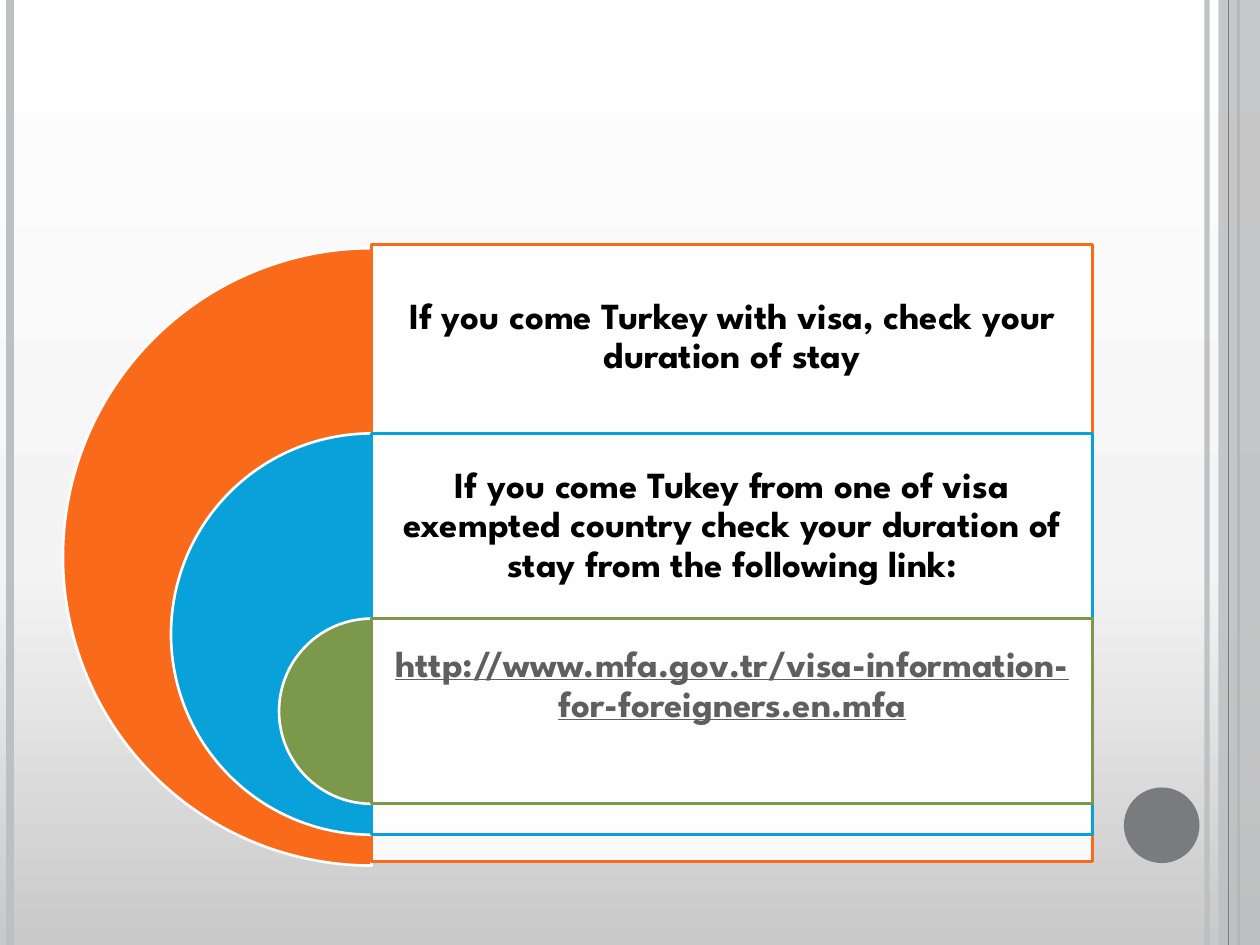
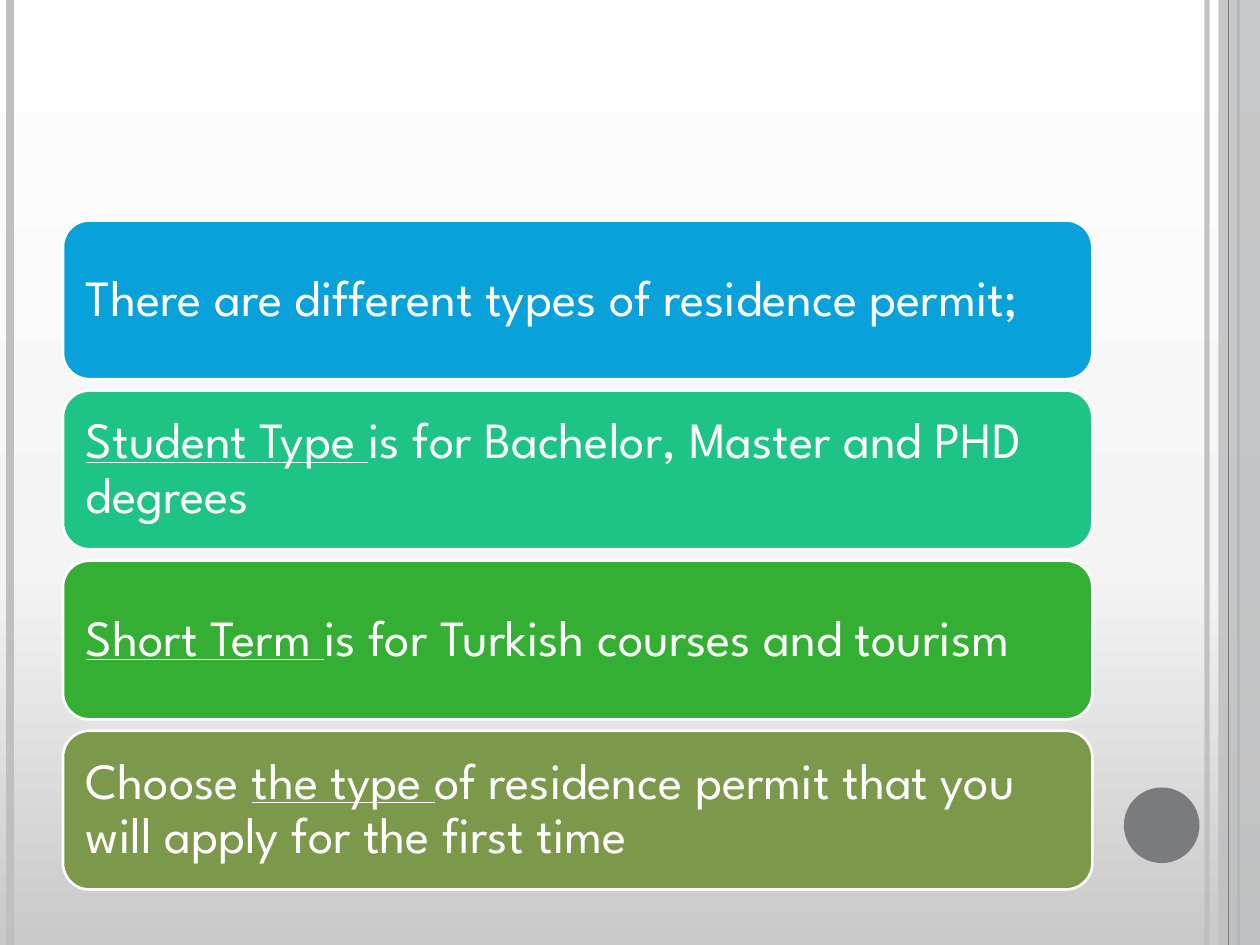
import copy

import pptx
import pptx.util
import pptx.dml.color
import pptx.enum.shapes
import pptx.enum.text
import pptx.oxml.ns
import pptx.oxml.xmlchemy
import lxml.etree

Inches = pptx.util.Inches
RGBColor = pptx.dml.color.RGBColor
SHAPE = pptx.enum.shapes.MSO_SHAPE
ALIGN = pptx.enum.text.PP_ALIGN
qn = pptx.oxml.ns.qn

WIDTH, HEIGHT = 10, 7.5
FONT = "League Spartan"

WHITE = RGBColor(0xFF, 0xFF, 0xFF)
BLACK = RGBColor(0x00, 0x00, 0x00)
LINK_GREY = RGBColor(0x5F, 0x5F, 0x5F)
PALE_GREY = RGBColor(0xBE, 0xBF, 0xC0)
DARK_GREY = RGBColor(0x79, 0x7B, 0x7E)
ORANGE = RGBColor(0xF9, 0x6A, 0x1B)
BLUE = RGBColor(0x08, 0xA1, 0xD9)
TEAL = RGBColor(0x1E, 0xC3, 0x86)
GREEN = RGBColor(0x35, 0xAE, 0x34)
OLIVE = RGBColor(0x7C, 0x98, 0x4A)

BACKDROP = [(0, "C9C9C9"), (40, "F4F4F4"), (100, "FFFFFF")]
BACK_RULES = [(9.58, PALE_GREY, 3, 93), (0.08, PALE_GREY, 4.5, 100), (9.83, DARK_GREY, 1.5, 100)]
FRONT_RULES = [(9.75, DARK_GREY, 0.75, 100)]
SIDE_BAND = (9.67, 0, 0.33, HEIGHT)
PAGE_DOT = (8.92, 6.25, 0.6, 0.6)

STAY_CHECKS = [
    {"runs": [("If you come Turkey with visa, check your duration of stay", False)],
     "accent": ORANGE, "ink": BLACK, "rise": 0.03, "lift": 0},
    {"runs": [("If you come Tukey from one of visa exempted country check your duration of stay "
               "from the following link:", False)],
     "accent": BLUE, "ink": BLACK, "rise": 0, "lift": 0},
    {"runs": [("http://www.mfa.gov.tr/visa-information-for-foreigners.en.mfa", True)],
     "accent": OLIVE, "ink": LINK_GREY, "rise": 0, "lift": 0.41},
]

PERMIT_TYPES = [
    (BLUE, [("There are different types of residence permit;", False)]),
    (TEAL, [("Student Type ", True), ("is for Bachelor, Master and PHD degrees", False)]),
    (GREEN, [("Short Term ", True), ("is for Turkish courses and tourism", False)]),
    (OLIVE, [("Choose ", False), ("the type ", True),
             ("of residence permit that you will apply for the first time", False)]),
]

LEFT, CONTENT_WIDTH = 0.5, 8.17
RING_TOP, RING_SIZE, RING_STEP = 1.97, 4.9, 0.3
BAR_TOP, BAR_HEIGHT, BAR_GAP = 1.75, 1.26, 0.09


def set_opacity(item, percent):
    if percent < 100:
        color = item.element.find(".//" + qn("a:srgbClr"))
        lxml.etree.SubElement(color, qn("a:alpha")).set("val", str(percent * 1000))


def add_block(slide, kind, box, fill, outline=None, opacity=100):
    block = slide.shapes.add_shape(kind, *map(Inches, box))
    block.shadow.inherit = False
    block.fill.solid()
    block.fill.fore_color.rgb = fill
    set_opacity(block, opacity)
    if outline is None:
        block.line.fill.background()
    else:
        block.line.color.rgb = outline
        block.line.width = pptx.util.Pt(1.5)
    return block


def add_rule(slide, x, color, weight, opacity):
    rule = slide.shapes.add_connector(pptx.enum.shapes.MSO_CONNECTOR.STRAIGHT,
                                      Inches(x), 0, Inches(x), Inches(HEIGHT))
    rule.line.color.rgb = color
    rule.line.width = pptx.util.Pt(weight)
    set_opacity(rule, opacity)
    lxml.etree.SubElement(rule.element.spPr, qn("a:effectLst"))


def write(block, runs, *, size, color, bold=False, align=ALIGN.LEFT, inset=0.1, below=0):
    frame = block.text_frame
    frame.word_wrap = True
    frame.vertical_anchor = pptx.enum.text.MSO_ANCHOR.MIDDLE
    frame.margin_left = frame.margin_right = frame.margin_top = Inches(inset)
    frame.margin_bottom = Inches(inset + below)
    paragraph = frame.paragraphs[0]
    paragraph.alignment = align
    paragraph.line_spacing = 0.9
    for words, underlined in runs:
        run = paragraph.add_run()
        run.text = words
        run.font.name = FONT
        run.font.size = pptx.util.Pt(size)
        run.font.bold = bold
        run.font.underline = underlined
        run.font.color.rgb = color


def paint_backdrop(master):
    fill = master.background.fill
    fill.gradient()
    fill.gradient_angle = 90
    stops = master.element.find(".//" + qn("a:gsLst"))
    template = copy.deepcopy(stops[0])
    for stop in list(stops):
        stops.remove(stop)
    for position, shade in BACKDROP:
        stop = copy.deepcopy(template)
        stop.set("pos", str(position * 1000))
        for child in list(stop):
            stop.remove(child)
        lxml.etree.SubElement(stop, qn("a:srgbClr")).set("val", shade)
        stops.append(stop)


def add_framed_slide(deck):
    slide = deck.slides.add_slide(deck.slide_layouts[6])
    for rule in BACK_RULES:
        add_rule(slide, *rule)
    add_block(slide, SHAPE.RECTANGLE, SIDE_BAND, PALE_GREY, opacity=87)
    for rule in FRONT_RULES:
        add_rule(slide, *rule)
    add_block(slide, SHAPE.OVAL, PAGE_DOT, DARK_GREY)
    return slide


def build_stay_checks(slide):
    center = LEFT + RING_SIZE / 2
    row = RING_SIZE * RING_STEP
    for level, check in enumerate(STAY_CHECKS):
        size = RING_SIZE * (1 - 0.35 * level)
        top = RING_TOP + row * level
        ring = add_block(slide, SHAPE.PIE, (center - size / 2, top, size, size),
                         check["accent"], WHITE)
        ring.adjustments[0], ring.adjustments[1] = 54, 162
        panel = add_block(slide, SHAPE.RECTANGLE,
                          (center, top - check["rise"], LEFT + CONTENT_WIDTH - center, size),
                          WHITE, check["accent"], opacity=90)
        write(panel, check["runs"], size=21, color=check["ink"], bold=True, align=ALIGN.CENTER,
              inset=0.09, below=size - row + check["lift"])


def build_permit_types(slide):
    for row, (accent, runs) in enumerate(PERMIT_TYPES):
        top = BAR_TOP + row * (BAR_HEIGHT + BAR_GAP)
        bar = add_block(slide, SHAPE.ROUNDED_RECTANGLE, (LEFT, top, CONTENT_WIDTH, BAR_HEIGHT),
                        accent, WHITE)
        write(bar, runs, size=29, color=WHITE, inset=0.12)


def main():
    deck = pptx.Presentation()
    deck.slide_width, deck.slide_height = Inches(WIDTH), Inches(HEIGHT)
    paint_backdrop(deck.slide_master)
    for build in (build_stay_checks, build_permit_types):
        build(add_framed_slide(deck))
    deck.save("out.pptx")


if __name__ == "__main__":
    main()
